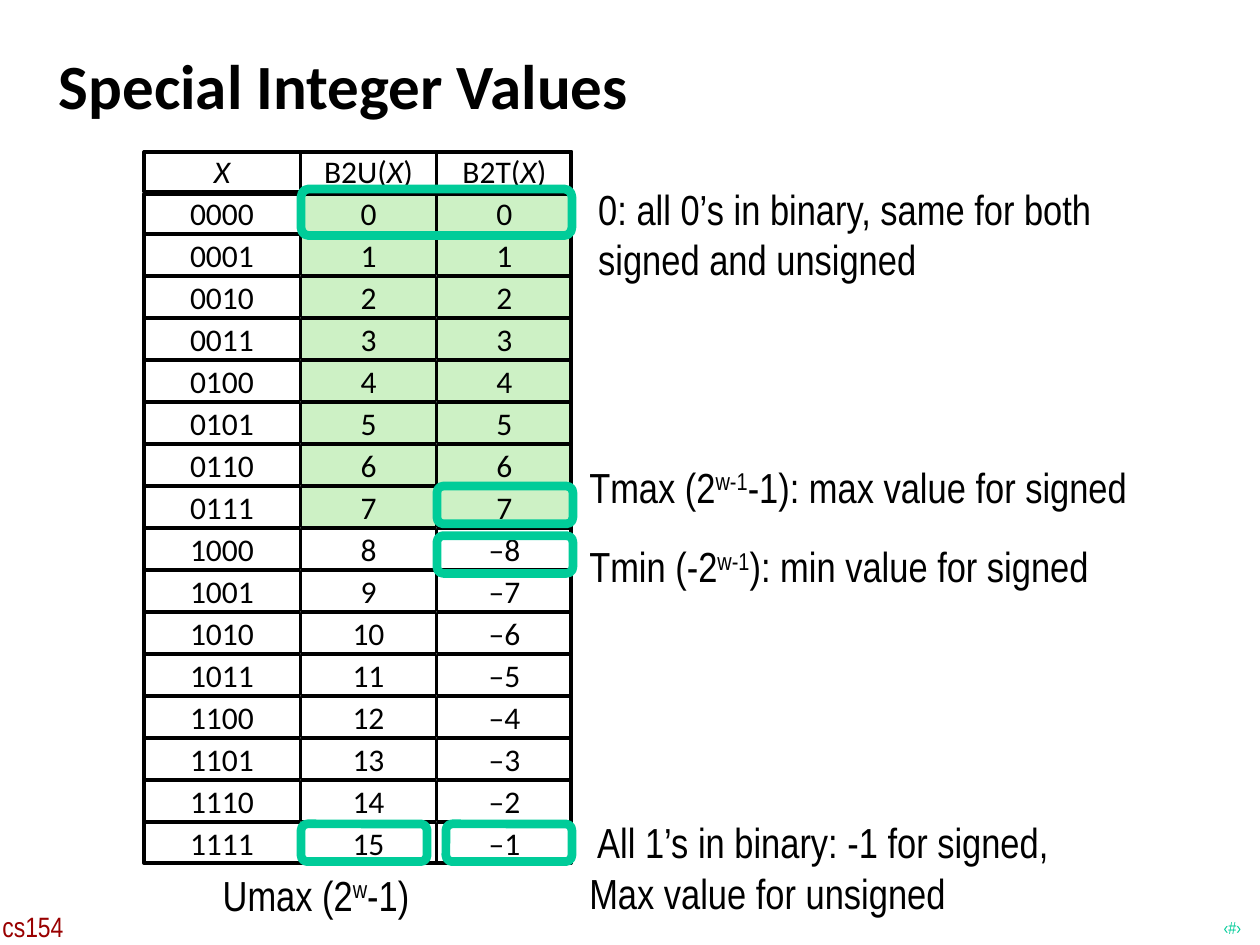
"""Build the slide on special integer values in unsigned and two's complement form."""
from dataclasses import dataclass
from typing import Optional

from pptx import Presentation
from pptx.dml.color import RGBColor
from pptx.enum.shapes import MSO_SHAPE as Preset
from pptx.enum.text import MSO_ANCHOR as Anchor, PP_ALIGN as Align
from pptx.shapes.autoshape import Shape
from pptx.shapes.shapetree import _BaseGroupShapes as Shapes
from pptx.text.text import _Paragraph as Paragraph
from pptx.util import Cm, Pt

BLACK = RGBColor(0x00, 0x00, 0x00)
WHITE = RGBColor(0xFF, 0xFF, 0xFF)
PALE_GREEN = RGBColor(0xCD, 0xF1, 0xC5)
TEAL = RGBColor(0x00, 0xCC, 0x99)
DARK_RED = RGBColor(0x99, 0x00, 0x00)

HEADINGS = (("", "X", ""), ("B2U(", "X", ")"), ("B2T(", "X", ")"))
COLUMNS = ((2.9, 3.15), (6.07, 2.72), (8.81, 2.72))
BITS = 4
VALUE_COUNT = 2 ** BITS
GRID_TOP = 3.05
ROW_PITCH = 14.39 / (VALUE_COUNT + 1)
CELL_HEIGHT = 0.81


@dataclass(frozen=True)
class Frame:
    left: float
    top: float
    width: float = 2.54
    height: float = 0.76
    preset: Preset = Preset.ROUNDED_RECTANGLE
    line: RGBColor = TEAL
    line_width: float = 5
    fill: Optional[RGBColor] = None


@dataclass(frozen=True)
class Note:
    """Text whose every second part between carets is a superscript."""
    left: float
    top: float
    width: float
    height: float
    lines: tuple[str, ...]
    size: int = 24
    color: RGBColor = BLACK
    font: str = "Arial Narrow"
    bold: bool = False
    wrap: bool = True
    anchor: Anchor = Anchor.TOP
    first_indent: float = 0


OUTLINES = (
    Frame(2.9, 3.07, 8.61, 0.79, Preset.RECTANGLE, BLACK, 2),
    Frame(2.9, 3.91, 8.61, 13.49, Preset.RECTANGLE, BLACK, 2),
)

HIGHLIGHTS = (
    Frame(6.07, 16.61),
    Frame(8.81, 9.8, 2.74),
    Frame(8.81, 10.8, 2.74),
    Frame(6.07, 3.81, 5.46, 0.94),
    Frame(8.99, 16.61),
)

NOTES = (
    Note(24.54, 18.36, 0.64, 0.64, ("‹#›",), size=10, color=TEAL, wrap=False),
    Note(-0.08, 18.21, 1.55, 0.94, ("cs154",), size=16, color=DARK_RED, wrap=False),
    Note(1.06, 0.9, 24.33, 1.6, ("Special Integer Values",), size=36,
         font="Calibri", bold=True, anchor=Anchor.MIDDLE),
    Note(4.36, 17.4, 4.45, 1.27, ("Umax (2^w^-1)",)),
    Note(11.75, 9.17, 12.7, 1.27, ("Tmax (2^w-1^-1): max value for signed",)),
    Note(11.75, 10.77, 12.01, 1.27, ("Tmin (-2^w-1^): min value for signed",)),
    Note(11.93, 3.57, 11.43, 2.31,
         ("0: all 0’s in binary, same for both signed and unsigned",)),
    Note(11.75, 16.34, 12.01, 2.31,
         ("All 1’s in binary: -1 for signed,", "Max value for unsigned"),
         first_indent=0.16),
)


def style_paragraph(paragraph: Paragraph, font: str, size: int, color: RGBColor,
                    bold: bool = False) -> None:
    paragraph.font.name = font
    paragraph.font.size = Pt(size)
    paragraph.font.color.rgb = color
    paragraph.font.bold = bold


def add_note(shapes: Shapes, note: Note) -> None:
    box = shapes.add_textbox(Cm(note.left), Cm(note.top), Cm(note.width), Cm(note.height))
    text = box.text_frame
    text.word_wrap = note.wrap
    text.vertical_anchor = note.anchor
    text.margin_left = text.margin_right = Cm(0.13)
    text.margin_top = text.margin_bottom = Cm(0.13)
    for number, line in enumerate(note.lines):
        paragraph = text.add_paragraph() if number else text.paragraphs[0]
        if note.first_indent and number == 0:
            paragraph._p.get_or_add_pPr().set("indent", str(Cm(note.first_indent)))
        style_paragraph(paragraph, note.font, note.size, note.color, note.bold)
        for position, part in enumerate(line.split("^")):
            run = paragraph.add_run()
            run.text = part
            if position % 2:
                run._r.get_or_add_rPr().set("baseline", "30000")


def add_frame(shapes: Shapes, frame: Frame) -> Shape:
    shape = shapes.add_shape(frame.preset, Cm(frame.left), Cm(frame.top),
                             Cm(frame.width), Cm(frame.height))
    shape.shadow.inherit = False
    if frame.fill is None:
        shape.fill.background()
    else:
        shape.fill.solid()
        shape.fill.fore_color.rgb = frame.fill
    shape.line.color.rgb = frame.line
    shape.line.width = Pt(frame.line_width)
    return shape


def add_cell(shapes: Shapes, parts: tuple[str, ...], row: int, column: int) -> None:
    left, width = COLUMNS[column]
    same_in_both = column > 0 and 1 <= row <= VALUE_COUNT // 2
    cell = add_frame(shapes, Frame(left, GRID_TOP + row * ROW_PITCH, width, CELL_HEIGHT,
                                   Preset.RECTANGLE, BLACK, 1,
                                   PALE_GREEN if same_in_both else WHITE))
    text = cell.text_frame
    text.word_wrap = False
    text.vertical_anchor = Anchor.MIDDLE
    paragraph = text.paragraphs[0]
    paragraph.alignment = Align.CENTER
    style_paragraph(paragraph, "Calibri", 18, BLACK)
    for position, part in enumerate(parts):
        if part:
            run = paragraph.add_run()
            run.text = part
            if position == 1:
                run.font.italic = True


def value_row(value: int) -> tuple[tuple[str], ...]:
    signed = value if value < VALUE_COUNT // 2 else value - VALUE_COUNT
    return (f"{value:0{BITS}b}",), (str(value),), (str(signed).replace("-", "–"),)


def add_value_grid(shapes: Shapes) -> None:
    grid = shapes.add_group_shape().shapes
    for row, entries in enumerate([HEADINGS, *map(value_row, range(VALUE_COUNT))]):
        for column, parts in enumerate(entries):
            add_cell(grid, parts, row, column)
    for outline in OUTLINES:
        add_frame(grid, outline)


def main() -> None:
    deck = Presentation()
    deck.slide_width, deck.slide_height = Cm(25.4), Cm(19.05)
    shapes = deck.slides.add_slide(deck.slide_layouts[6]).shapes
    add_value_grid(shapes)
    for highlight in HIGHLIGHTS:
        add_frame(shapes, highlight)
    for note in NOTES:
        add_note(shapes, note)
    deck.save("out.pptx")


if __name__ == "__main__":
    main()
